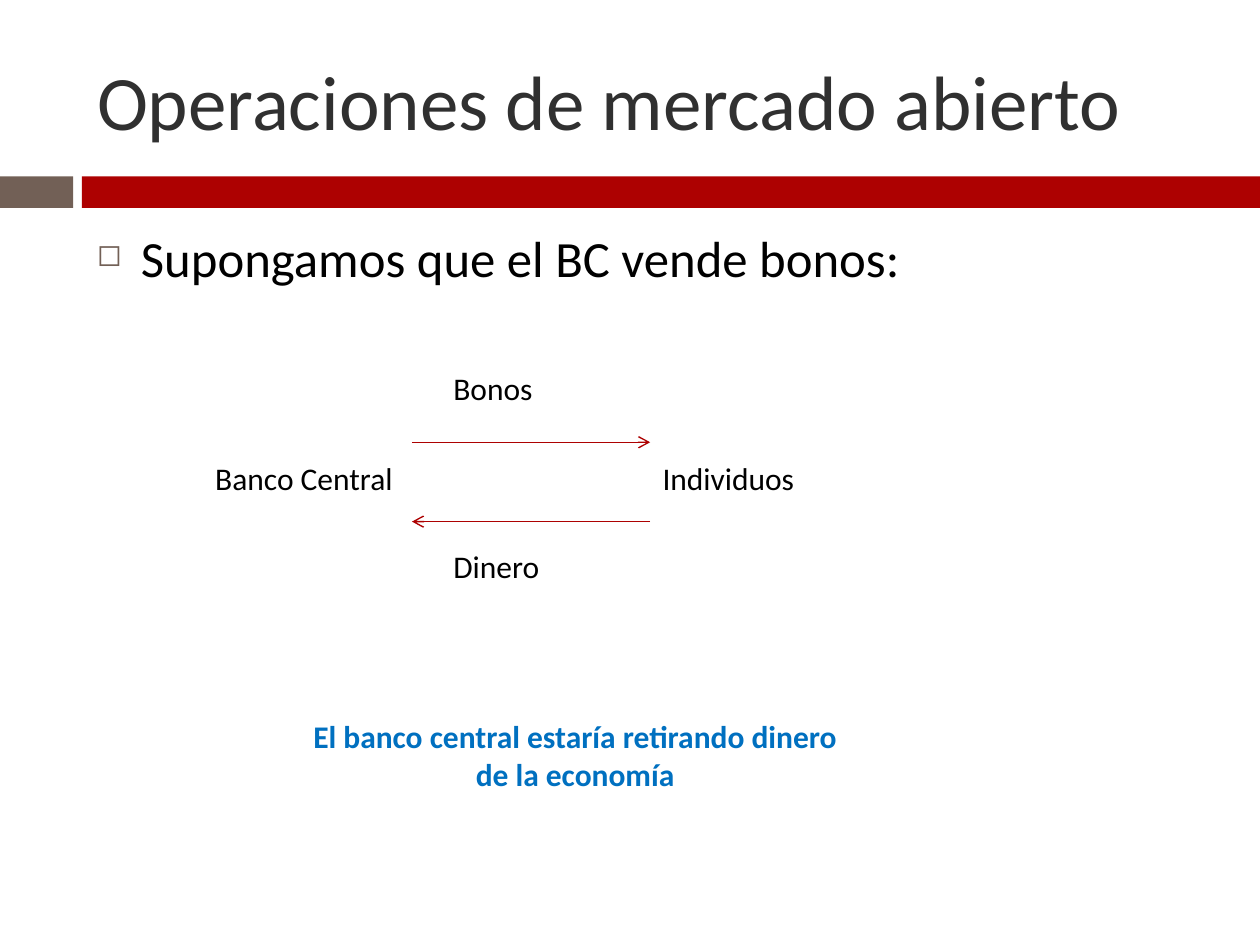
from lxml import etree
from pptx import Presentation
from pptx.dml.color import RGBColor
from pptx.enum import shapes, text
from pptx.oxml.ns import qn
from pptx.util import Pt

# Content: places are left, top, width, height in points
TITLE = ("Operaciones de mercado abierto", (48.24, 18, 642.24, 77.76))
BODY = ("Supongamos que el BC vende bonos:", (48.24, 126, 642.24, 354.24))
BANDS = [("726056", 0, 41.76), ("AD0101", 46.8, 673.2)]
BAND_TOP, BAND_HEIGHT = 100.8, 18
LABELS = [
    ("Banco Central", (115.92, 258.48, 147.6, 28.8)),
    ("Individuos", (371.52, 258.48, 147.6, 28.8)),
    ("Bonos", (252, 207.36, 108, 28.8)),
    ("Dinero", (252, 308.88, 108, 28.8)),
]
CONCLUSION = ("El banco central estaría retirando dinero de la economía",
              (161.28, 406.08, 334.8, 51.12))
ARROWS = [(235.44, 371.52, 252.72), (371.52, 235.44, 298.08)]  # from x, to x, y
ARROW_COLOUR = "AD0101"
BULLET = {"character": "◻", "colour": "726056", "percent": 60, "indent": 25.2}


def colour(value):
    return RGBColor.from_string(value)


def place(shape, box):
    for name, value in zip(("left", "top", "width", "height"), box):
        setattr(shape, name, Pt(value))


def write(shape, words, size, fill="000000", bold=False,
          align=text.PP_ALIGN.LEFT, anchor=text.MSO_ANCHOR.TOP):
    frame = shape.text_frame
    frame.word_wrap = True
    frame.auto_size = text.MSO_AUTO_SIZE.NONE
    frame.vertical_anchor = anchor
    paragraph = frame.paragraphs[0]
    paragraph.alignment = align
    run = paragraph.add_run()
    run.text = words
    for name, value in {"name": "Calibri", "size": Pt(size), "bold": bold}.items():
        setattr(run.font, name, value)
    run.font.color.rgb = colour(fill)
    return paragraph


def add_text(slide, words, box, size=18, **style):
    shape = slide.shapes.add_textbox(*map(Pt, box))
    return write(shape, words, size, **style)


def add_bullet(paragraph, character, colour, percent, indent):
    paragraph.space_before = Pt(7)
    properties = paragraph._p.get_or_add_pPr()
    properties.set("marL", str(Pt(indent)))
    properties.set("indent", str(-Pt(indent)))
    bullet_colour = etree.SubElement(properties, qn("a:buClr"))
    etree.SubElement(bullet_colour, qn("a:srgbClr"), val=colour)
    etree.SubElement(properties, qn("a:buSzPct"), val=str(percent * 1000))
    etree.SubElement(properties, qn("a:buChar"), char=character)


def add_arrow(slide, start, end, y):
    arrow = slide.shapes.add_connector(
        shapes.MSO_CONNECTOR.STRAIGHT, Pt(start), Pt(y), Pt(end), Pt(y))
    arrow.line.color.rgb = colour(ARROW_COLOUR)
    arrow.line.width = Pt(0.79)
    etree.SubElement(arrow.line._get_or_add_ln(), qn("a:tailEnd"), type="arrow")
    etree.SubElement(arrow._element.spPr, qn("a:effectLst"))


def main():
    presentation = Presentation()
    presentation.slide_width, presentation.slide_height = Pt(720), Pt(540)
    slide = presentation.slides.add_slide(presentation.slide_layouts[5])

    # Bands under the title
    for fill, left, width in BANDS:
        band = slide.shapes.add_shape(
            shapes.MSO_SHAPE.RECTANGLE,
            *map(Pt, (left, BAND_TOP, width, BAND_HEIGHT)))
        band.shadow.inherit = False
        band.fill.solid()
        band.fill.fore_color.rgb = colour(fill)
        band.line.fill.background()

    # Title and bullet
    words, box = TITLE
    place(slide.shapes.title, box)
    write(slide.shapes.title, words, 44, fill="303030",
          anchor=text.MSO_ANCHOR.MIDDLE)
    add_bullet(add_text(slide, *BODY, size=29), **BULLET)

    # Exchange between the two parties
    for words, box in LABELS:
        add_text(slide, words, box)
    for start, end, y in ARROWS:
        add_arrow(slide, start, end, y)

    # Conclusion
    add_text(slide, *CONCLUSION, fill="0070C0", bold=True,
             align=text.PP_ALIGN.CENTER)

    presentation.save("out.pptx")


if __name__ == "__main__":
    main()
